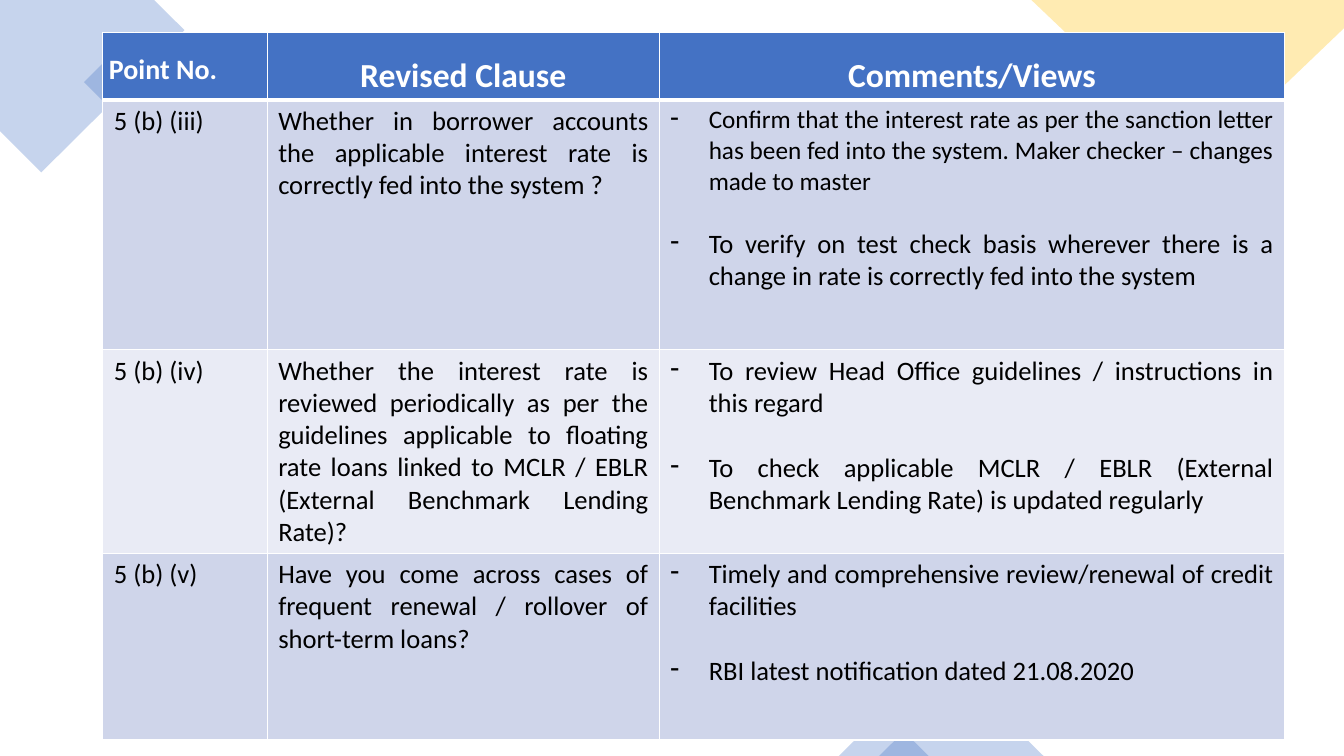
from lxml.etree import SubElement
from pptx import Presentation
from pptx.dml.color import RGBColor
from pptx.enum.shapes import MSO_SHAPE
from pptx.enum.text import MSO_ANCHOR, PP_ALIGN
from pptx.oxml.ns import qn
from pptx.util import Pt

PX = 9144
THEME = {
    "font": "Calibri", "blue": "4472C4", "gold": "FFC000", "white": "FFFFFF",
    "black": "000000", "bands": ("CFD5EA", "E9EBF5"), "alpha": 30000,
    "label": 20, "head": 24, "body": 19, "small": 18, "thin": 1, "thick": 3,
}
HEADS = ("Point No.", "Revised Clause", "Comments/Views")
ROWS = [
    ("5 (b) (iii)",
     "Whether in borrower accounts the applicable interest rate is correctly fed into the system ?",
     [("Confirm that the interest rate as per the sanction letter has been fed into the system. "
       "Maker checker – changes made to master", "small"),
      ("To verify on test check basis wherever there is a change in rate is correctly fed into the system",
       "body")]),
    ("5 (b) (iv)",
     "Whether the interest rate is reviewed periodically as per the guidelines applicable to floating "
     "rate loans linked to MCLR / EBLR (External Benchmark Lending Rate)?",
     [("To review Head Office guidelines / instructions in this regard", "body"),
      ("To check applicable MCLR / EBLR (External Benchmark Lending Rate) is updated regularly", "body")]),
    ("5 (b) (v)",
     "Have you come across cases of frequent renewal / rollover of short-term loans?",
     [("Timely and comprehensive review/renewal of credit facilities", "body"),
      ("RBI latest notification dated 21.08.2020", "body")]),
]


def apply(obj, form):
    for key, val in form.items():
        setattr(obj, key, val)


def paint(fill, tone):
    fill.solid()
    fill.fore_color.rgb = RGBColor.from_string(THEME[tone] if tone in THEME else tone)


def tint(shape, tone):
    paint(shape.fill, tone)
    color = shape.fill._xPr.find(qn("a:solidFill"))[0]
    SubElement(color, qn("a:alpha"), val=str(THEME["alpha"]))
    shape.line.fill.background()
    shape.shadow.inherit = False


def outline(slide, box, points, tone):
    left, top = box[:2]
    spots = [(left + x, top + y) for x, y in points]
    form = slide.shapes.build_freeform(*spots[0], scale=PX)
    form.add_line_segments(spots[1:], close=True)
    tint(form.convert_to_shape(), tone)


def preset(slide, kind, box, tone, turn=0):
    shape = slide.shapes.add_shape(kind, *(n * PX for n in box))
    shape.rotation = turn
    tint(shape, tone)


def corner(slide, box, points, tone, square):
    outline(slide, box, points, tone)
    left, top = box[:2]
    x, y, size = square
    preset(slide, MSO_SHAPE.RECTANGLE, (left + x, top + y, size, size), tone, 315)


def footer(slide, box):
    left, top, wide, high = box
    for x, width, height in ((40, 163, 81), (0, 89, 44)):
        preset(slide, MSO_SHAPE.ISOSCELES_TRIANGLE,
               (left + x, top + high - height, width, height), "blue")


def write(para, text, size, tone, form, bold=False):
    apply(para, form)
    run = para.add_run()
    run.text = text
    apply(run.font, {"name": THEME["font"], "size": Pt(THEME[size]), "bold": bold})
    run.font.color.rgb = RGBColor.from_string(THEME[tone])


def dash(para):
    props = para._p.get_or_add_pPr()
    for key, val in (("marL", 38), ("indent", -38)):
        props.set(key, str(val * PX))
    SubElement(props, qn("a:buChar"), char="-")


def border(cell, sides):
    props = cell._tc.get_or_add_tcPr()
    for spot, (side, width) in enumerate(sides.items()):
        line = SubElement(props, qn("a:ln" + side), w=str(Pt(width)))
        fill = SubElement(line, qn("a:solidFill"))
        SubElement(fill, qn("a:srgbClr"), val=THEME["white"])
        props.insert(spot, line)


def dress(cell, tone, pad, top, bottom):
    side, edge = (n * PX for n in pad)
    apply(cell, {"margin_left": side, "margin_right": side, "margin_top": edge,
                 "margin_bottom": edge, "vertical_anchor": MSO_ANCHOR.TOP})
    paint(cell.fill, tone)
    thin = THEME["thin"]
    border(cell, {"L": thin, "R": thin, "T": THEME[top], "B": THEME[bottom]})


def header(table):
    for col, text in enumerate(HEADS):
        cell = table.cell(0, col)
        dress(cell, "blue", (6, 3), "thin", "thick")
        form = {"alignment": PP_ALIGN.CENTER if col else PP_ALIGN.LEFT, "line_spacing": 1.5}
        write(cell.text_frame.paragraphs[0], text, "head" if col else "label", "white", form, True)


def record(table, row, data):
    just = {"alignment": PP_ALIGN.JUSTIFY}
    for col, item in enumerate(data):
        cell = table.cell(row, col)
        dress(cell, THEME["bands"][(row - 1) % 2], (11, 5), "thick" if row == 1 else "thin", "thin")
        frame = cell.text_frame
        if col < 2:
            write(frame.paragraphs[0], item, "body", "black", just)
            continue
        for spot, (text, size) in enumerate(item):
            para = frame.add_paragraph() if spot else frame.paragraphs[0]
            gap = Pt(1.22 * THEME[item[0][1]]) if spot else Pt(0)
            write(para, text, size, "black", {**just, "space_before": gap})
            dash(para)


def grid(slide, box):
    cols, rows = (163, 389, 620), (60, 248, 194, 185)
    table = slide.shapes.add_table(len(rows), len(cols), *(n * PX for n in box)).table
    table.horz_banding = False
    for col, wide in zip(table.columns, cols):
        col.width = wide * PX
    for row, high in zip(table.rows, rows):
        row.height = high * PX
    header(table)
    for row, data in enumerate(ROWS, 1):
        record(table, row, data)


def main():
    deck = Presentation()
    apply(deck, {"slide_width": 1333 * PX, "slide_height": 750 * PX})
    slide = deck.slides.add_slide(deck.slide_layouts[6])
    corner(slide, (0, 0, 183, 171), [(153, 0), (0, 0), (0, 130), (41, 171), (183, 30)],
           "blue", (98, 46, 71))
    corner(slide, (1023, 0, 310, 162), [(310, 0), (0, 0), (170, 162), (310, 28)],
           "gold", (75, 72, 75))
    footer(slide, (832, 669, 203, 81))
    grid(slide, (102, 32, 1172, 687))
    deck.save("out.pptx")


if __name__ == "__main__":
    main()
